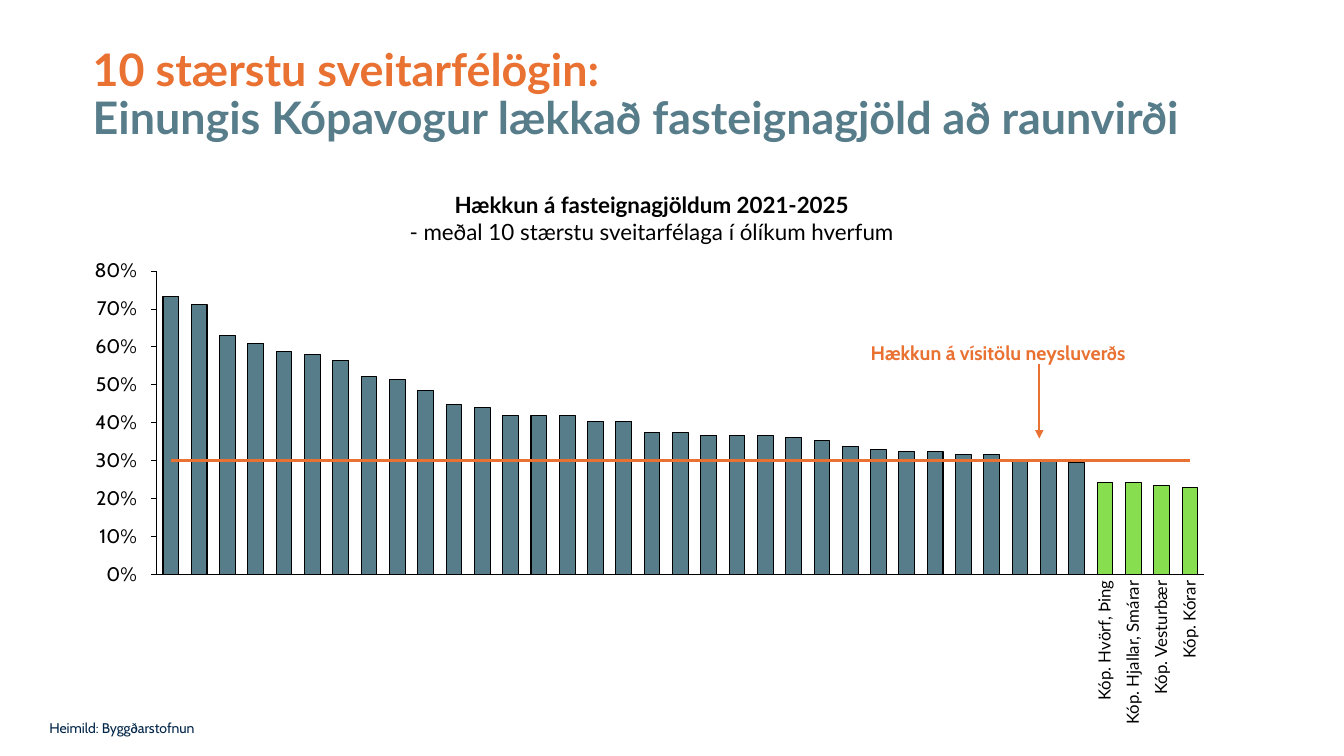
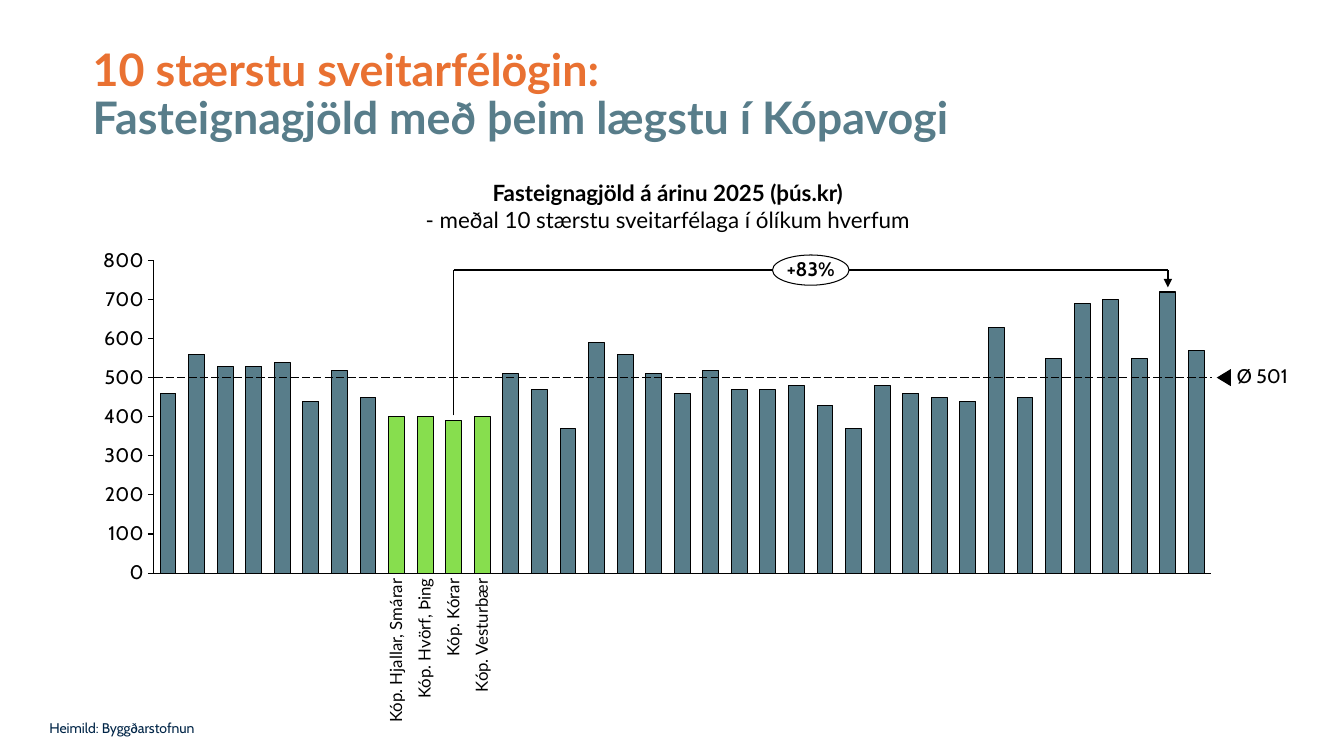
from dataclasses import dataclass
from typing import NamedTuple

from lxml import etree
from pptx import Presentation
from pptx.chart.chart import Chart
from pptx.chart.data import CategoryChartData
from pptx.dml.color import RGBColor
from pptx.enum.chart import XL_CHART_TYPE, XL_TICK_LABEL_POSITION, XL_TICK_MARK
from pptx.enum.dml import MSO_LINE
from pptx.enum.shapes import MSO_CONNECTOR, MSO_SHAPE
from pptx.enum.text import MSO_ANCHOR, MSO_AUTO_SIZE, PP_ALIGN
from pptx.oxml.ns import qn
from pptx.slide import Slide
from pptx.text.text import Font, TextFrame
from pptx.util import Emu, Inches, Pt

STACKED = XL_CHART_TYPE.COLUMN_STACKED
NO_LABELS = XL_TICK_LABEL_POSITION.NONE
NO_TICK, TICK_OUT = XL_TICK_MARK.NONE, XL_TICK_MARK.OUTSIDE
STRAIGHT = MSO_CONNECTOR.STRAIGHT
OVAL, ARROW = MSO_SHAPE.OVAL, MSO_SHAPE.RIGHT_ARROW
LEFT, CENTER, RIGHT = PP_ALIGN.LEFT, PP_ALIGN.CENTER, PP_ALIGN.RIGHT
TOP, MIDDLE = MSO_ANCHOR.TOP, MSO_ANCHOR.MIDDLE
NO_FIT, GROW = MSO_AUTO_SIZE.NONE, MSO_AUTO_SIZE.SHAPE_TO_FIT_TEXT
LONG_DASH = MSO_LINE.LONG_DASH
WIDE, HIGH = Inches(13.33), Inches(7.5)


@dataclass(frozen=True)
class Theme:
    orange: str = "E97132"
    slate: str = "587D8A"
    green: str = "87DE4E"
    navy: str = "002547"
    black: str = "000000"
    white: str = "FFFFFF"
    main: str = "Lato"
    side: str = "Cabin"
    title: int = 32
    head: int = 16
    label: int = 14
    name: int = 12
    small: int = 10
    thin: float = 0.75
    tight: float = 0.9


THEME = Theme()


class Box(NamedTuple):
    left: float
    top: float
    wide: float
    high: float

    def place(self) -> tuple[Emu, Emu, Emu, Emu]:
        return (across(self.left), down(self.top), across(self.wide), down(self.high))


class Run(NamedTuple):
    text: str
    size: int
    face: str
    color: str = THEME.black
    bold: bool = False


class Plot(NamedTuple):
    box: Box
    inner: Box
    values: list[int]
    green: range
    top: float
    step: float
    labels: bool
    level: int = 0

    def bar_x(self, index: int) -> float:
        share = self.inner.left + self.inner.wide * (index + 0.5) / len(self.values)
        return self.box.left + self.box.wide * share

    def value_y(self, value: float) -> float:
        share = self.inner.top + self.inner.high * (1 - value / self.top)
        return self.box.top + self.box.high * share


class Page(NamedTuple):
    title: str
    span: float
    head: str
    head_box: Box
    plot: Plot
    names: list[str]
    names_top: float


def across(share: float) -> Emu:
    return Emu(round(WIDE * share / 100))


def down(share: float) -> Emu:
    return Emu(round(HIGH * share / 100))


def rgb(color: str) -> RGBColor:
    return RGBColor.from_string(color)


def style(font: Font, size: int, face: str, color: str, bold: bool = False) -> None:
    font.size, font.name, font.bold = Pt(size), face, bold
    font.color.rgb = rgb(color)


def inset(frame: TextFrame, left: float = 0) -> None:
    frame.margin_left = Inches(left)
    frame.margin_top = frame.margin_right = frame.margin_bottom = 0


def write(frame: TextFrame, lines: list[Run], align: PP_ALIGN = LEFT,
          space: float = 1) -> None:
    for row, line in enumerate(lines):
        para = frame.add_paragraph() if row else frame.paragraphs[0]
        para.alignment, para.line_spacing = align, space
        run = para.add_run()
        run.text = line.text
        style(run.font, *line[1:])


def add_note(slide: Slide, box: Box, line: Run) -> None:
    frame = slide.shapes.add_textbox(*box.place()).text_frame
    frame.word_wrap, frame.auto_size = True, GROW
    write(frame, [line])


def add_label(slide: Slide, box: Box, line: Run, align: PP_ALIGN = RIGHT,
              turned: bool = False) -> None:
    shape = slide.shapes.add_textbox(*box.place())
    frame = shape.text_frame
    frame.word_wrap, frame.vertical_anchor = False, MIDDLE
    inset(frame)
    if turned:
        shape.element.txBody.bodyPr.set("vert", "vert270")
    write(frame, [line], align, THEME.tight)


def add_line(slide: Slide, start: tuple[float, float], end: tuple[float, float],
             color: str = THEME.black, width: float = 1, arrow: bool = False,
             dashed: bool = False) -> None:
    rule = slide.shapes.add_connector(STRAIGHT, across(start[0]), down(start[1]),
                                      across(end[0]), down(end[1]))
    rule.line.color.rgb, rule.line.width = rgb(color), Pt(width)
    if dashed:
        rule.line.dash_style = LONG_DASH
    props = rule.element.spPr
    if arrow:
        etree.SubElement(props.find(qn("a:ln")), qn("a:tailEnd"), type="triangle")
    etree.SubElement(props, qn("a:effectLst"))


def set_inner(chart: Chart, inner: Box) -> None:
    area = chart.element.find(".//" + qn("c:plotArea"))
    for old in area.findall(qn("c:layout")):
        area.remove(old)
    layout = etree.Element(qn("c:layout"))
    area.insert(0, layout)
    manual = etree.SubElement(layout, qn("c:manualLayout"))
    pairs = [("layoutTarget", "inner"), ("xMode", "edge"), ("yMode", "edge"),
             *zip("xywh", map(str, inner))]
    for tag, value in pairs:
        etree.SubElement(manual, qn("c:" + tag), val=value)


def split_line(chart: Chart) -> None:
    bars = chart.element.find(".//" + qn("c:barChart"))
    series = bars.findall(qn("c:ser"))[1]
    for flag in series.findall(qn("c:invertIfNegative")):
        series.remove(flag)
    group = etree.Element(qn("c:lineChart"))
    etree.SubElement(group, qn("c:grouping"), val="standard")
    etree.SubElement(group, qn("c:varyColors"), val="0")
    group.append(series)
    marker = etree.Element(qn("c:marker"))
    etree.SubElement(marker, qn("c:symbol"), val="none")
    series.find(qn("c:cat")).addprevious(marker)
    etree.SubElement(series, qn("c:smooth"), val="0")
    for axis in bars.findall(qn("c:axId")):
        etree.SubElement(group, qn("c:axId"), val=axis.get("val"))
    bars.addnext(group)


def add_plot(slide: Slide, plot: Plot) -> None:
    count = len(plot.values)
    data = CategoryChartData()
    data.categories = [str(n + 1) for n in range(count)]
    data.add_series("Series 1", plot.values)
    if plot.level:
        data.add_series("Series 2", [plot.level] * count)
    chart = slide.shapes.add_chart(STACKED, *plot.box.place(), data).chart
    chart.has_title = chart.has_legend = False
    style(chart.font, THEME.small, THEME.main, THEME.black)
    bars = chart.plots[0]
    bars.gap_width, bars.overlap, bars.vary_by_categories = 80, 100, False
    series = bars.series[0]
    for index in [None, *plot.green]:
        part = (series if index is None else series.points[index]).format
        part.fill.solid()
        part.fill.fore_color.rgb = rgb(THEME.slate if index is None else THEME.green)
        part.line.color.rgb, part.line.width = rgb(THEME.black), Pt(THEME.thin)
    for axis, tick in ((chart.category_axis, NO_TICK), (chart.value_axis, TICK_OUT)):
        axis.has_major_gridlines = False
        axis.major_tick_mark, axis.minor_tick_mark = tick, NO_TICK
        axis.format.line.color.rgb = rgb(THEME.black)
        axis.format.line.width = Pt(THEME.thin)
    scale = chart.value_axis
    scale.minimum_scale, scale.maximum_scale, scale.major_unit = 0, plot.top, plot.step
    style(scale.tick_labels.font, THEME.label, THEME.side, THEME.black)
    scale.tick_labels.number_format = '#,##0;"-"#,##0'
    scale.tick_labels.number_format_is_linked = False
    chart.category_axis.tick_label_position = NO_LABELS
    if not plot.labels:
        scale.tick_label_position = NO_LABELS
    if plot.level:
        line = bars.series[1].format.line
        line.color.rgb, line.width = rgb(THEME.orange), Pt(2.25)
        split_line(chart)
    set_inner(chart, plot.inner)


LENGTHS = {"Kóp. Hvörf, Þing": 16.13, "Kóp. Hjallar, Smárar": 19.33,
           "Kóp. Vesturbær": 15.47, "Kóp. Kórar": 10.53}


def add_page(deck: Presentation, page: Page) -> Slide:
    slide = deck.slides.add_slide(deck.slide_layouts[5])
    title = slide.shapes.title
    title.left, title.top, title.width, title.height = Box(6.9, 6.27, page.span, 16.5).place()
    frame = title.text_frame
    frame.vertical_anchor, frame.auto_size, frame.word_wrap = TOP, NO_FIT, True
    inset(frame)
    write(frame, [Run("10 stærstu sveitarfélögin:", THEME.title, THEME.main,
                      THEME.orange, True)], LEFT, THEME.tight)
    para = frame.paragraphs[0]
    para.add_line_break()
    run = para.add_run()
    run.text = page.title
    style(run.font, THEME.title, THEME.main, THEME.slate, True)

    head = slide.shapes.add_textbox(*page.head_box.place()).text_frame
    head.word_wrap = True
    inset(head, 0.08)
    write(head, [Run(page.head, THEME.head, THEME.main, bold=True),
                 Run("- meðal 10 stærstu sveitarfélaga í ólíkum hverfum",
                     THEME.head, THEME.main)], CENTER)
    add_plot(slide, page.plot)
    for index, name in zip(page.plot.green, page.names):
        box = Box(page.plot.bar_x(index) - 0.67, page.names_top, 1.35, LENGTHS[name])
        add_label(slide, box, Run(name, THEME.name, THEME.main), turned=True)
    add_note(slide, Box(2.93, 94.53, 35.55, 3.6),
             Run("Heimild: Byggðarstofnun", THEME.small, THEME.side, THEME.navy))
    return slide


def add_growth(slide: Slide) -> None:
    for step in range(9):
        add_label(slide, Box(6.2, 74.67 - 5.02 * step, 4, 2.8),
                  Run(f"{step * 10}%", THEME.label, THEME.side))
    add_note(slide, Box(64.05, 44.4, 32.93, 4.53),
             Run("Hækkun á vísitölu neysluverðs", THEME.label, THEME.side,
                 THEME.orange, True))
    add_line(slide, (77.33, 48.13), (77.33, 58), THEME.orange, 1.5, arrow=True)


def add_spread(slide: Slide, plot: Plot) -> None:
    low, high, beam = plot.bar_x(10), plot.bar_x(35), 35.73
    add_line(slide, (low, 54.93), (low, beam))
    add_line(slide, (low, beam), (high, beam))
    add_line(slide, (high, beam), (high, 38), arrow=True)
    mean = plot.value_y(501)
    add_line(slide, (11.48, mean), (90.15, mean), width=THEME.thin, dashed=True)
    flag = slide.shapes.add_shape(ARROW, *Box(90.53, mean - 1.13, 1.05, 2.27).place())
    flag.adjustments[0] = flag.adjustments[1] = 1
    flag.rotation, flag.shadow.inherit = 180, False
    flag.fill.solid()
    flag.fill.fore_color.rgb = rgb(THEME.black)
    flag.line.fill.background()
    add_label(slide, Box(92.03, mean - 1.4, 3.98, 2.8),
              Run("Ø 501", THEME.label, THEME.side), LEFT)
    badge = slide.shapes.add_shape(
        OVAL, *Box((low + high) / 2 - 2.85, beam - 2, 5.7, 4).place())
    badge.shadow.inherit = False
    badge.fill.solid()
    badge.fill.fore_color.rgb = rgb(THEME.white)
    badge.line.color.rgb, badge.line.width = rgb(THEME.black), Pt(THEME.thin)
    frame = badge.text_frame
    frame.word_wrap, frame.vertical_anchor = False, MIDDLE
    inset(frame)
    write(frame, [Run("+83%", THEME.label, THEME.side, bold=True)], CENTER, THEME.tight)


GROWTH = Page(
    "Einungis Kópavogur lækkað fasteignagjöld að raunvirði", 90.08,
    "Hækkun á fasteignagjöldum 2021-2025", Box(15.68, 25.33, 65.03, 5.47),
    Plot(Box(10.95, 34.67, 79.28, 42.53), Box(0.009, 0.028, 0.983, 0.943),
         [100, 97, 86, 83, 80, 79, 77, 71, 70, 66, 61, 60, 57, 57, 57, 55, 55, 51, 51,
          50, 50, 50, 49, 48, 46, 45, 44, 44, 43, 43, 41, 41, 40, 33, 33, 32, 31],
         range(33, 37), 109, 13.62, False, 41),
    ["Kóp. Hvörf, Þing", "Kóp. Hjallar, Smárar", "Kóp. Vesturbær", "Kóp. Kórar"], 76.8)
SPREAD = Page(
    "Fasteignagjöld með þeim lægstu í Kópavogi", 92.33,
    "Fasteignagjöld á árinu 2025 (þús.kr)", Box(16.88, 23.73, 65.03, 8.13),
    Plot(Box(6.38, 31.47, 84.38, 47.33), Box(0.06, 0.064, 0.932, 0.873),
         [460, 560, 530, 530, 540, 440, 520, 450, 400, 400, 390, 400, 510, 470, 370,
          590, 560, 510, 460, 520, 470, 470, 480, 430, 370, 480, 460, 450, 440, 630,
          450, 550, 690, 700, 550, 720, 570],
         range(8, 12), 800, 100, True),
    ["Kóp. Hjallar, Smárar", "Kóp. Hvörf, Þing", "Kóp. Kórar", "Kóp. Vesturbær"], 76.53)


def main() -> None:
    deck = Presentation()
    deck.slide_width, deck.slide_height = WIDE, HIGH
    add_growth(add_page(deck, GROWTH))
    add_spread(add_page(deck, SPREAD), SPREAD.plot)
    deck.save("out.pptx")


if __name__ == "__main__":
    main()
